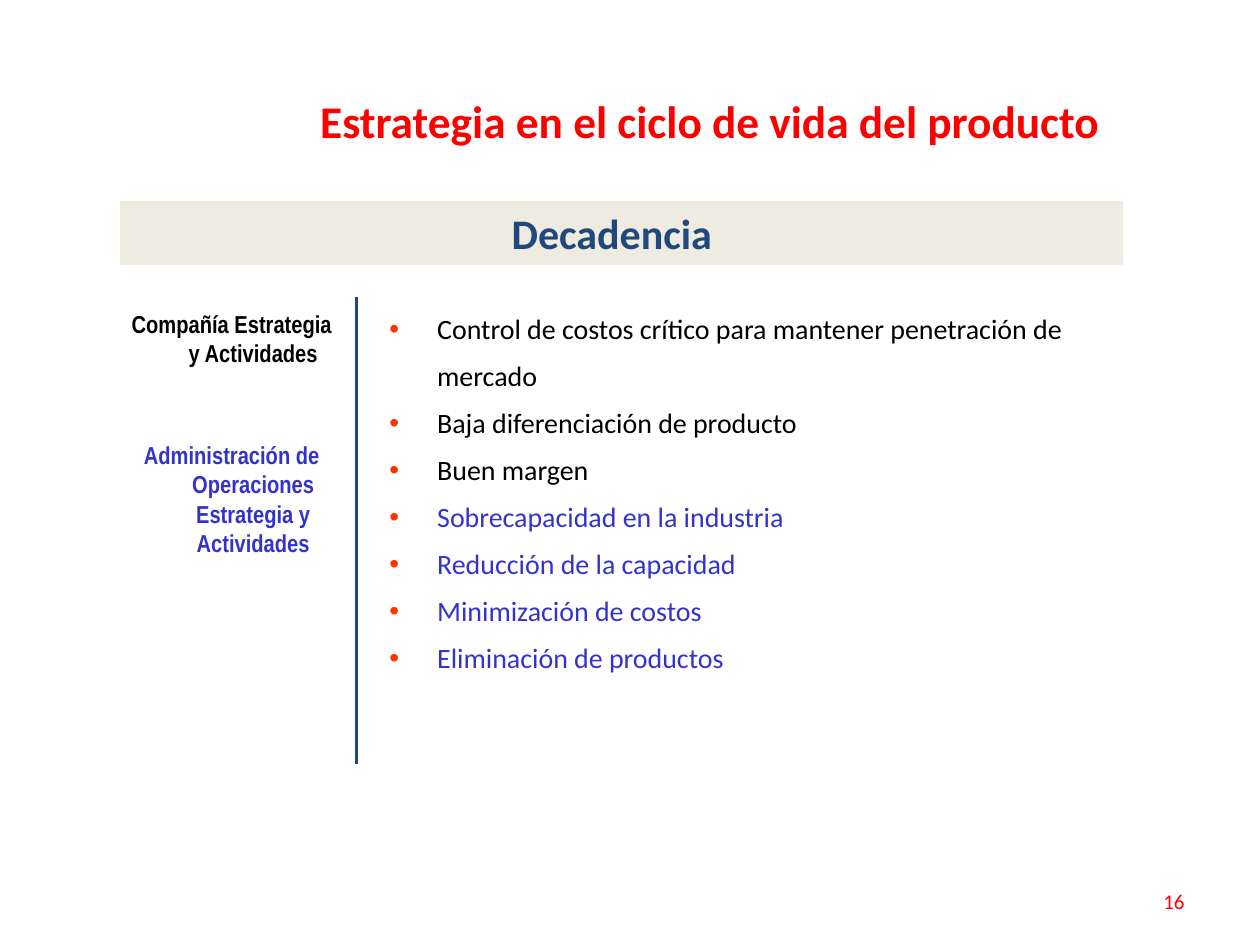
from dataclasses import dataclass

import pptx
import pptx.dml.color
import pptx.enum.shapes
import pptx.enum.text
import pptx.oxml
import pptx.oxml.ns
import pptx.util
from lxml import etree

Inches, Pt = pptx.util.Inches, pptx.util.Pt
ALIGN, ANCHOR = pptx.enum.text.PP_ALIGN, pptx.enum.text.MSO_ANCHOR
WIDTH, HEIGHT = Inches(10), Inches(7.5)
COLORS = {"red": "FF0000", "bullet": "FF3300", "black": "000000",
          "violet": "3333CC", "navy": "1F497D", "sand": "EEECE1"}


@dataclass
class Area:
    """A rectangle in percent of the slide's width and height."""
    left: float
    top: float
    width: float
    height: float

    def lengths(self) -> tuple[int, int, int, int]:
        return (across(self.left), down(self.top),
                across(self.width), down(self.height))


@dataclass
class Line:
    text: str
    color: str


def across(percent: float) -> int:
    return round(WIDTH * percent / 100)


def down(percent: float) -> int:
    return round(HEIGHT * percent / 100)


def rgb(name: str) -> pptx.dml.color.RGBColor:
    return pptx.dml.color.RGBColor.from_string(COLORS[name])


def place(shape, area: Area) -> None:
    shape.left, shape.top, shape.width, shape.height = area.lengths()


def add_bullet(properties) -> None:
    color = etree.SubElement(properties, pptx.oxml.ns.qn("a:buClr"))
    etree.SubElement(color, pptx.oxml.ns.qn("a:srgbClr"), val=COLORS["bullet"])
    etree.SubElement(properties, pptx.oxml.ns.qn("a:buFont"), typeface="Arial")
    etree.SubElement(properties, pptx.oxml.ns.qn("a:buChar"), char="•")


def write(shape, lines: list[Line], *, size: float, font: str = "Calibri",
          bold: bool = False, align=ALIGN.LEFT, anchor=ANCHOR.TOP,
          inset: float = 0.1, left_inset: float | None = None,
          hanging: float = 0, bullets: bool = False,
          spacing: float = 1.0, gap: float = 0) -> None:
    """Fill a shape with one paragraph per line; gap is in points."""
    frame = shape.text_frame
    frame.word_wrap = True
    frame.auto_size = pptx.enum.text.MSO_AUTO_SIZE.NONE
    frame.vertical_anchor = anchor
    frame.margin_left = Inches(inset if left_inset is None else left_inset)
    frame.margin_right = Inches(inset)
    frame.margin_top = frame.margin_bottom = Inches(0.05)
    for index, line in enumerate(lines):
        para = frame.add_paragraph() if index else frame.paragraphs[0]
        properties = para._p.get_or_add_pPr()
        properties.set("marL", str(Inches(hanging)))
        properties.set("indent", str(-Inches(hanging)))
        if bullets:
            add_bullet(properties)
        para.alignment = align
        para.line_spacing = spacing
        para.space_before = Pt(gap if index else 0)
        span = para.add_run()
        span.text = line.text
        span.font.name, span.font.size, span.font.bold = font, Pt(size), bold
        span.font.color.rgb = rgb(line.color)


def add_divider(page, x: float, top: float, bottom: float) -> None:
    divider = page.shapes.add_connector(
        pptx.enum.shapes.MSO_CONNECTOR.STRAIGHT,
        across(x), down(top), across(x), down(bottom))
    divider.line.color.rgb = rgb("navy")
    divider.line.width = Pt(2)
    etree.SubElement(divider._element.spPr, pptx.oxml.ns.qn("a:effectLst"))


def add_band(page, area: Area):
    band = page.shapes.add_shape(
        pptx.enum.shapes.MSO_SHAPE.RECTANGLE, *area.lengths())
    band.shadow.inherit = False
    band.fill.solid()
    band.fill.fore_color.rgb = band.line.color.rgb = rgb("sand")
    band.line.width = Pt(1)
    return band


STRATEGIES = [
    Line("Control de costos crítico para mantener penetración de mercado", "black"),
    Line("Baja diferenciación de producto", "black"),
    Line("Buen margen", "black"),
    Line("Sobrecapacidad en la industria", "violet"),
    Line("Reducción de la capacidad", "violet"),
    Line("Minimización de costos", "violet"),
    Line("Eliminación de productos", "violet"),
]
LEVELS = [
    Line("Compañía Estrategia y Actividades", "black"),
    Line("Administración de Operaciones Estrategia y Actividades", "violet"),
]


def main() -> None:
    deck = pptx.Presentation()
    deck.slide_width, deck.slide_height = WIDTH, HEIGHT
    page = deck.slides.add_slide(deck.slide_layouts[1])

    title, body = page.placeholders
    place(title, Area(22.7, 7.73, 67.3, 10))
    write(title, [Line("Estrategia en el ciclo de vida del producto", "red")],
          size=25.9, bold=True, align=ALIGN.CENTER, anchor=ANCHOR.MIDDLE,
          inset=0.09)
    place(body, Area(29.9, 30.93, 60.7, 47.07))
    write(body, STRATEGIES, size=16, hanging=0.38, bullets=True, spacing=1.4)

    stage = add_band(page, Area(9.6, 21.33, 79.5, 6.67))
    write(stage, [Line("Decadencia", "navy")], size=24, bold=True,
          anchor=ANCHOR.MIDDLE, left_inset=3.1)
    add_divider(page, 28.3, 31.47, 80.8)

    levels = page.shapes.add_textbox(*Area(9.4, 32, 18, 46.4).lengths())
    write(levels, LEVELS, size=14, font="Arial Narrow", bold=True,
          align=ALIGN.CENTER, inset=0.09, hanging=0.34, gap=41.5)
    number = page.shapes.add_textbox(*Area(71.7, 92.67, 23.3, 5.33).lengths())
    write(number, [Line("16", "red")], size=12, align=ALIGN.RIGHT,
          anchor=ANCHOR.MIDDLE)

    deck.save("out.pptx")


if __name__ == "__main__":
    main()
